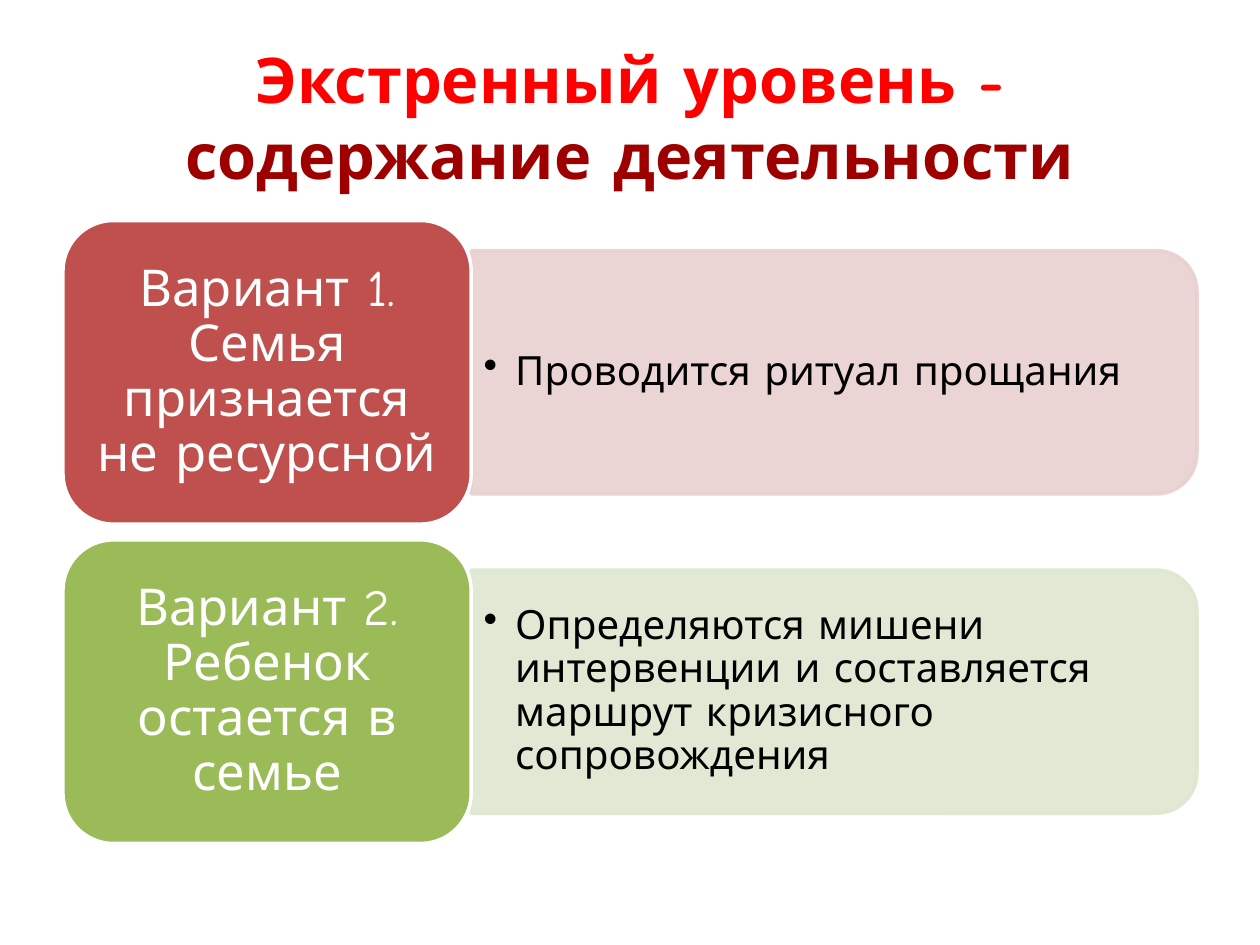
from dataclasses import dataclass

from lxml.etree import SubElement
from pptx import Presentation
from pptx.dml.color import RGBColor
from pptx.enum.shapes import MSO_SHAPE as Preset
from pptx.enum.text import MSO_ANCHOR as Anchor, PP_ALIGN as Align
from pptx.oxml.ns import qn
from pptx.util import Pt


@dataclass(frozen=True)
class Theme:
    font: str = "Comic Neue"
    title_size: int = 36
    label_size: int = 29
    detail_size: int = 23
    title: str = "FF0000"
    subtitle: str = "9E0000"
    light: str = "FFFFFF"
    dark: str = "000000"
    outline: int = 2
    panel_opacity: int = 90


@dataclass(frozen=True)
class Box:
    left: float
    top: float
    width: float
    height: float

    def lengths(self) -> tuple:
        return tuple(Pt(n) for n in (self.left, self.top, self.width, self.height))


@dataclass(frozen=True)
class Variant:
    label: str
    detail: str
    label_fill: str
    panel_fill: str


THEME = Theme()
TITLE_BOX = Box(36, 21.6, 648, 90)
ROW_TOP, ROW_STEP = 126, 182.5
LABEL_WIDTH, LABEL_HEIGHT = 233.3, 173.5
PANEL_LENGTH, PANEL_HEIGHT = 414.7, 139
LEFT = 36
VARIANTS = (
    Variant("Вариант 1. Семья признается не ресурсной",
            "Проводится ритуал прощания", "C0504D", "E8D0D0"),
    Variant("Вариант 2. Ребенок остается в семье",
            "Определяются мишени интервенции и составляется маршрут "
            "кризисного сопровождения", "9BBB59", "DEE7D1"),
)


def apply(target, values: dict) -> None:
    for name, value in values.items():
        setattr(target, name, value)


def add_run(paragraph, text: str, size: int, color: str, bold: bool = False) -> None:
    run = paragraph.add_run()
    run.text = text
    apply(run.font, {"name": THEME.font, "size": Pt(size), "bold": bold})
    run.font.color.rgb = RGBColor.from_string(color)


def add_text(slide, box: Box, inset: float, align):
    """Add a wrapped, vertically centred text box; return its first paragraph."""
    frame = slide.shapes.add_textbox(*box.lengths()).text_frame
    apply(frame, {
        "word_wrap": True, "vertical_anchor": Anchor.MIDDLE,
        "margin_left": Pt(inset), "margin_right": Pt(inset),
        "margin_top": Pt(inset / 2), "margin_bottom": Pt(inset / 2),
    })
    paragraph = frame.paragraphs[0]
    paragraph.alignment = align
    return paragraph


def add_bullet(paragraph, indent: float) -> None:
    properties = paragraph._p.get_or_add_pPr()
    properties.set("marL", str(Pt(indent)))
    properties.set("indent", str(Pt(-indent)))
    SubElement(properties, qn("a:buChar")).set("char", "•")


def add_block(slide, preset, box: Box, fill: str, line: str, opacity: int = 100):
    shape = slide.shapes.add_shape(preset, *box.lengths())
    shape.shadow.inherit = False
    shape.line.width = Pt(THEME.outline)
    for paint, color in ((shape.fill, fill), (shape.line.fill, line)):
        paint.solid()
        paint.fore_color.rgb = RGBColor.from_string(color)
    if opacity < 100:
        for color in shape._element.spPr.iter(qn("a:srgbClr")):
            SubElement(color, qn("a:alpha")).set("val", str(opacity * 1000))
    return shape


def add_title(slide) -> None:
    paragraph = add_text(slide, TITLE_BOX, 7.2, Align.CENTER)
    add_run(paragraph, "Экстренный уровень -", THEME.title_size, THEME.title, True)
    paragraph.add_line_break()
    add_run(paragraph, "содержание деятельности", THEME.title_size, THEME.subtitle, True)


def add_variant(slide, variant: Variant, top: float) -> None:
    middle = top + LABEL_HEIGHT / 2
    panel_left = LEFT + LABEL_WIDTH

    # Detail panel: an upright shape turned so its round corners face right
    panel_box = Box(panel_left + (PANEL_LENGTH - PANEL_HEIGHT) / 2,
                    middle - PANEL_LENGTH / 2, PANEL_HEIGHT, PANEL_LENGTH)
    panel = add_block(slide, Preset.ROUND_2_SAME_RECTANGLE, panel_box,
                      variant.panel_fill, variant.panel_fill, THEME.panel_opacity)
    panel.rotation = 90
    paragraph = add_text(slide, Box(panel_left, middle - 62.7, 408, 125.4), 7.2, Align.LEFT)
    add_bullet(paragraph, 18)
    paragraph.line_spacing = 0.9
    add_run(paragraph, variant.detail, THEME.detail_size, THEME.dark)

    # Label block
    add_block(slide, Preset.ROUNDED_RECTANGLE,
              Box(LEFT, top, LABEL_WIDTH, LABEL_HEIGHT), variant.label_fill, THEME.light)
    pad = 8.5
    label_box = Box(LEFT + pad, top + pad, LABEL_WIDTH - 2 * pad, LABEL_HEIGHT - 2 * pad)
    paragraph = add_text(slide, label_box, 8.7, Align.CENTER)
    paragraph.line_spacing = 0.9
    add_run(paragraph, variant.label, THEME.label_size, THEME.light)


def main() -> None:
    presentation = Presentation()
    apply(presentation, {"slide_width": Pt(720), "slide_height": Pt(540)})
    slide = presentation.slides.add_slide(presentation.slide_layouts[6])
    add_title(slide)
    for row, variant in enumerate(VARIANTS):
        add_variant(slide, variant, ROW_TOP + row * ROW_STEP)
    presentation.save("out.pptx")


if __name__ == "__main__":
    main()
